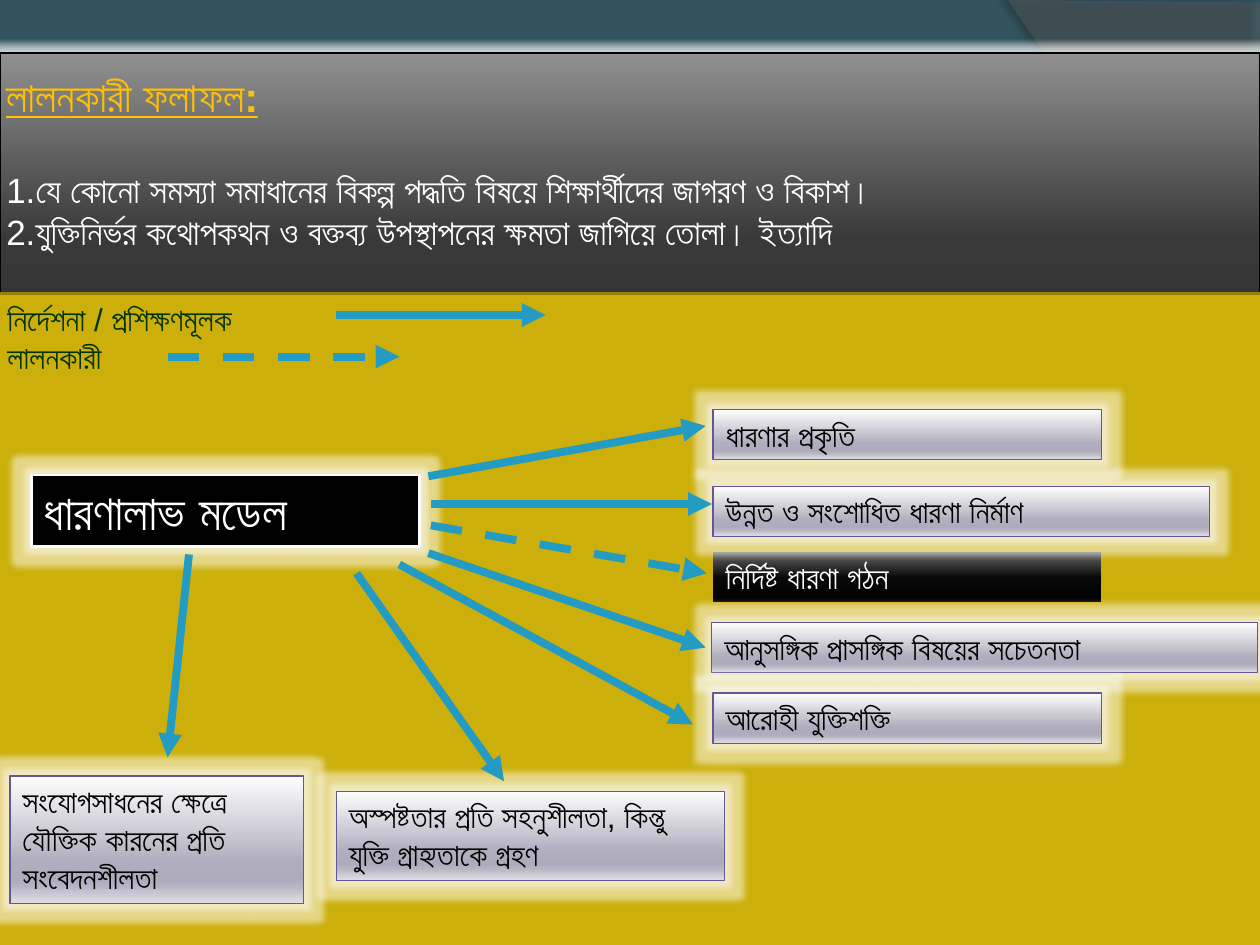
from dataclasses import dataclass
from typing import NamedTuple, Optional

from pptx import Presentation
from pptx.dml.color import RGBColor
from pptx.enum import dml, shapes, text
from pptx.oxml import ns, xmlchemy
from pptx.util import Inches, Pt


@dataclass(frozen=True)
class Theme:
    font: str = "Arial"
    background: str = "32525D"
    corner: str = "5E5E5E"
    panel: str = "CCAF0A"
    panel_edge: str = "978107"
    arrow: str = "239BC2"
    box_edge: str = "625899"
    heading: str = "FFC000"
    legend: str = "003300"
    light: str = "FFFFFF"
    dark: str = "000000"
    glow: str = "FEFEFE"
    model_size: int = 28
    heading_size: int = 24
    list_size: int = 20
    body_size: int = 18
    header_stops: tuple = ((0, "909090"), (25, "393939"), (38, "323232"), (55, "000000"),
                           (88, "000000"), (100, "181818"))
    box_stops: tuple = ((0, "FEFEFE"), (68, "B0AEBE"), (81, "ADABBC"), (86, "B5B3C2"),
                        (100, "E0DFE4"))
    focus_stops: tuple = ((0, "666666"), (52, "080808"), (100, "000000"))


class Box(NamedTuple):
    label: str
    left: float
    top: float
    width: float
    height: float = 0.4
    focus: bool = False


class Arrow(NamedTuple):
    start: tuple
    end: tuple
    dashed: bool = False


THEME = Theme()

OUTCOMES = [
    Box("নির্দিষ্ট ধারণা গঠন", 5.66, 4.38, 3.08, focus=True),
    Box("উন্নত ও সংশোধিত ধারণা নির্মাণ", 5.66, 3.86, 3.94),
    Box("আনুসঙ্গিক প্রাসঙ্গিক বিষয়ের সচেতনতা", 5.65, 4.94, 4.33),
    Box("ধারণার প্রকৃতি", 5.66, 3.25, 3.08),
    Box("আরোহী যুক্তিশক্তি", 5.66, 5.5, 3.08),
    Box("অস্পষ্টতার প্রতি সহনুশীলতা, কিন্তু যুক্তি গ্রাহ্যতাকে গ্রহণ", 2.67, 6.28, 3.08, 0.71),
    Box("সংযোগসাধনের ক্ষেত্রে যৌক্তিক কারনের প্রতি সংবেদনশীলতা", 0.08, 6.16, 2.33, 1.01),
]

LEGEND_ARROWS = [
    Arrow((1.33, 2.83), (3.17, 2.83), dashed=True),
    Arrow((2.67, 2.5), (4.33, 2.5)),
]

MODEL_ARROWS = [
    Arrow((3.42, 4.17), (5.61, 4.55), dashed=True),
    Arrow((3.4, 3.78), (5.6, 3.38)),
    Arrow((3.42, 4), (5.65, 4)),
    Arrow((3.4, 4.39), (5.6, 5.14)),
    Arrow((3.17, 4.48), (5.5, 5.75)),
    Arrow((2.83, 4.55), (4, 6.2)),
    Arrow((1.5, 4.4), (1.33, 6.01)),
]


def add_node(parent, tag: str, **attributes):
    """Append a DrawingML element to parent and return it."""
    node = xmlchemy.OxmlElement(tag)
    for key, value in attributes.items():
        node.set(key, str(value))
    parent.append(node)
    return node


def add_color(parent, color: str, opacity: int = 100) -> None:
    node = add_node(parent, "a:srgbClr", val=color)
    if opacity < 100:
        add_node(node, "a:alpha", val=opacity * 1000)


def add_effect(shape, tag: str, color: str, opacity: int, **attributes) -> None:
    effects = shape._element.spPr.find(ns.qn("a:effectLst"))
    add_color(add_node(effects, tag, **attributes), color, opacity)


def fill_gradient(shape, stops: tuple) -> None:
    """Fill from top to bottom with stops of (percent, colour)."""
    shape.fill.gradient()
    shape.fill.gradient_angle = 270
    stop_list = shape._element.spPr.find(".//" + ns.qn("a:gsLst"))
    for stop in list(stop_list):
        stop_list.remove(stop)
    for percent, color in stops:
        add_color(add_node(stop_list, "a:gs", pos=percent * 1000), color)


def add_panel(slide, left: float, top: float, width: float, height: float, *,
              fill: str = "", stops: tuple = (), edge: str = "",
              edge_width: float = 0.75, glow: float = 0):
    panel = slide.shapes.add_shape(shapes.MSO_SHAPE.RECTANGLE, Inches(left), Inches(top),
                                   Inches(width), Inches(height))
    panel.shadow.inherit = False
    if stops:
        fill_gradient(panel, stops)
    else:
        panel.fill.solid()
        panel.fill.fore_color.rgb = RGBColor.from_string(fill)
    if edge:
        panel.line.color.rgb = RGBColor.from_string(edge)
        panel.line.width = Pt(edge_width)
    else:
        panel.line.fill.background()
    if glow:
        add_effect(panel, "a:glow", THEME.glow, 50, rad=Inches(glow))
    frame = panel.text_frame
    frame.word_wrap = True
    frame.vertical_anchor = text.MSO_ANCHOR.TOP
    return panel


def write(shape, content: str, *, size: int, color: str, bold: bool = False,
          underline: bool = False, before: Optional[float] = None) -> None:
    """Write one paragraph, after any that the shape already holds."""
    frame = shape.text_frame
    paragraph = frame.add_paragraph() if frame.text else frame.paragraphs[0]
    paragraph.alignment = text.PP_ALIGN.LEFT
    if before is not None:
        paragraph.space_before = Pt(before)
    run = paragraph.add_run()
    run.text = content
    font = run.font
    font.name, font.size, font.bold, font.underline = THEME.font, Pt(size), bold, underline
    font.color.rgb = RGBColor.from_string(color)
    add_node(run._r.get_or_add_rPr(), "a:cs", typeface=THEME.font)


def add_arrow(slide, arrow: Arrow) -> None:
    points = [Inches(value) for value in (*arrow.start, *arrow.end)]
    connector = slide.shapes.add_connector(shapes.MSO_CONNECTOR.STRAIGHT, *points)
    connector.line.color.rgb = RGBColor.from_string(THEME.arrow)
    connector.line.width = Pt(4.5)
    if arrow.dashed:
        connector.line.dash_style = dml.MSO_LINE.DASH
    add_node(connector.line._get_or_add_ln(), "a:tailEnd", type="triangle")
    add_node(connector._element.spPr, "a:effectLst")


def add_corner(slide) -> None:
    """Draw the translucent curved band at the right edge."""
    controls = ((8.21, 7.5), (9.35, 6.19), (10.18, 3), (8, 0))
    steps = 24
    curve = []
    for step in range(steps + 1):
        t = step / steps
        weights = ((1 - t) ** 3, 3 * t * (1 - t) ** 2, 3 * t * t * (1 - t), t ** 3)
        curve.append(tuple(Inches(sum(w * point[axis] for w, point in zip(weights, controls)))
                           for axis in (0, 1)))
    builder = slide.shapes.build_freeform(Inches(10), Inches(0.02))
    builder.add_line_segments([(Inches(10), Inches(7.5)), *curve], close=True)
    corner = builder.convert_to_shape()
    corner.shadow.inherit = False
    corner.fill.solid()
    corner.fill.fore_color.rgb = RGBColor.from_string(THEME.corner)
    color = corner._element.spPr.find(".//" + ns.qn("a:srgbClr"))
    add_node(color, "a:alpha", val=40000)
    corner.line.fill.background()
    add_effect(corner, "a:outerShdw", THEME.dark, 45, blurRad=Pt(4), dist=Pt(4), dir=10800000)


def main() -> None:
    deck = Presentation()
    deck.slide_width, deck.slide_height = Inches(10), Inches(7.5)
    slide = deck.slides.add_slide(deck.slide_layouts[6])

    # Background
    slide.background.fill.solid()
    slide.background.fill.fore_color.rgb = RGBColor.from_string(THEME.background)
    add_corner(slide)

    # Header with the nurturant effects
    header = add_panel(slide, 0, 0.42, 10, 5.92, stops=THEME.header_stops, edge=THEME.dark,
                       glow=0.05)
    header.text_frame.margin_left = header.text_frame.margin_right = Inches(0.05)
    header.text_frame.margin_top = Inches(0.14)
    write(header, "লালনকারী ফলাফল:", size=THEME.heading_size, color=THEME.heading,
          bold=True, underline=True)
    write(header, "1.যে কোনো সমস্যা সমাধানের বিকল্প পদ্ধতি বিষয়ে শিক্ষার্থীদের জাগরণ ও বিকাশ।",
          size=THEME.list_size, color=THEME.light, before=27)
    write(header, "2.যুক্তিনির্ভর কথোপকথন ও বক্তব্য উপস্থাপনের ক্ষমতা জাগিয়ে তোলা। ইত্যাদি",
          size=THEME.list_size, color=THEME.light)

    # Diagram panel with its legend
    diagram = add_panel(slide, -0.04, 2.33, 10.08, 6.46, fill=THEME.panel,
                        edge=THEME.panel_edge, edge_width=1.5)
    for entry in ("নির্দেশনা / প্রশিক্ষণমূলক", "লালনকারী"):
        write(diagram, entry, size=THEME.body_size, color=THEME.legend)
    for arrow in LEGEND_ARROWS:
        add_arrow(slide, arrow)

    # Outcome boxes
    for box in OUTCOMES:
        outcome = add_panel(slide, box.left, box.top, box.width, box.height,
                            stops=THEME.focus_stops if box.focus else THEME.box_stops,
                            edge="" if box.focus else THEME.box_edge,
                            glow=0 if box.focus else 0.1)
        write(outcome, box.label, size=THEME.body_size,
              color=THEME.light if box.focus else THEME.dark)

    # Model and its arrows
    model = add_panel(slide, 0.25, 3.77, 3.08, 0.57, fill=THEME.dark, edge=THEME.light,
                      edge_width=1.5, glow=0.1)
    write(model, "ধারণালাভ মডেল", size=THEME.model_size, color=THEME.light, bold=True)
    for arrow in MODEL_ARROWS:
        add_arrow(slide, arrow)

    deck.save("out.pptx")


if __name__ == "__main__":
    main()
